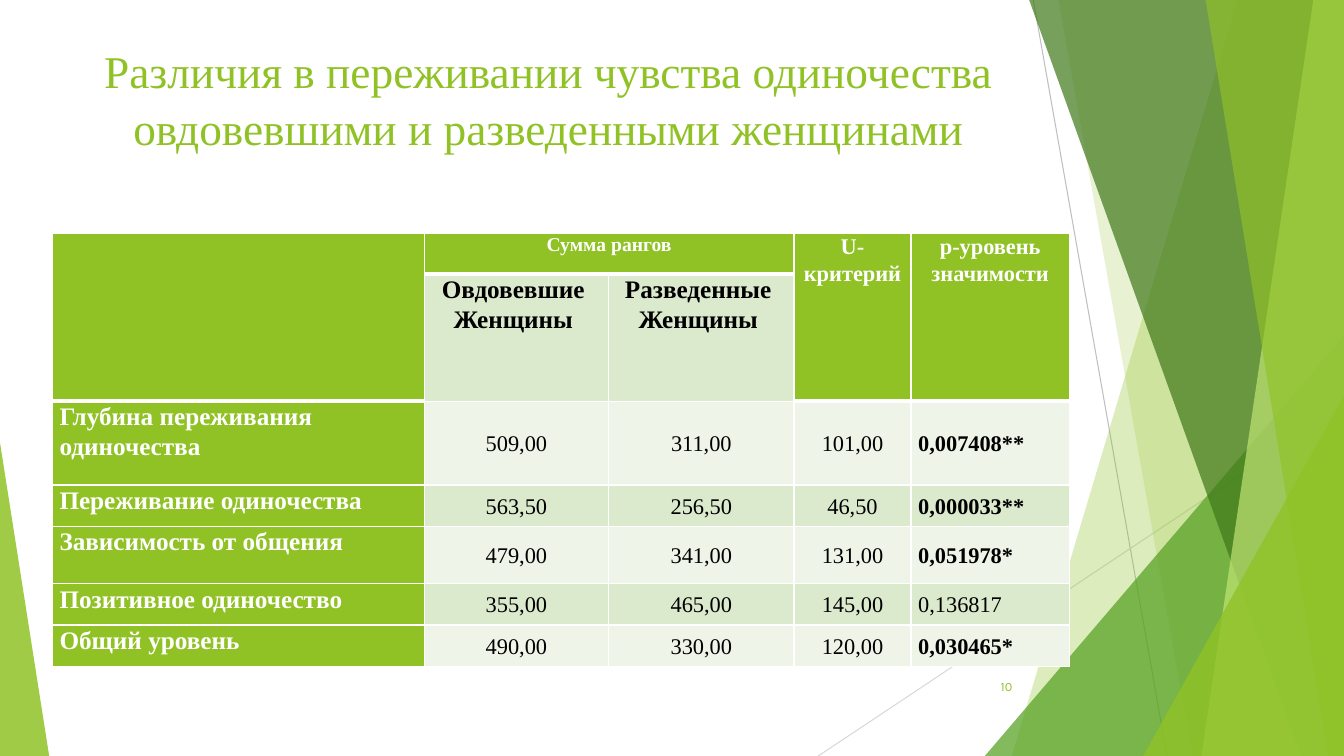
import lxml.etree
import pptx
import pptx.dml.color
import pptx.enum.shapes
import pptx.enum.text
import pptx.oxml.ns
import pptx.util

Cm = pptx.util.Cm
Pt = pptx.util.Pt
RGBColor = pptx.dml.color.RGBColor
Align = pptx.enum.text.PP_ALIGN
Anchor = pptx.enum.text.MSO_ANCHOR
qn = pptx.oxml.ns.qn

LIME = RGBColor(0x90, 0xC2, 0x26)
LEAF = RGBColor(0x54, 0xA0, 0x21)
PINE = RGBColor(0x3F, 0x78, 0x19)
PALE = RGBColor(0xC0, 0xE4, 0x74)
SAGE = RGBColor(0xDB, 0xE9, 0xCD)
MIST = RGBColor(0xEE, 0xF4, 0xE8)
GREY = RGBColor(0xBF, 0xBF, 0xBF)
SILVER = RGBColor(0xD9, 0xD9, 0xD9)
WHITE = RGBColor(0xFF, 0xFF, 0xFF)
BLACK = RGBColor(0, 0, 0)
SERIF = "Times New Roman"
WIDE, HIGH = 33.87, 19.05


def write(frame, text, look, align, gap=1.0):
    """Fill a text frame, one paragraph per line of text."""
    frame.text = text
    for para in frame.paragraphs:
        para.alignment = align
        para.line_spacing = gap
        for run in para.runs:
            run.font.color.rgb = look["color"]
            for key, value in look.items():
                if key != "color":
                    setattr(run.font, key, value)


def tint(shape, color, alpha):
    """Give a shape a see-through fill with no line or shadow."""
    shape.shadow.inherit = False
    shape.line.fill.background()
    shape.fill.solid()
    shape.fill.fore_color.rgb = color
    paint = shape.element.spPr.find(qn("a:solidFill"))[0]
    lxml.etree.SubElement(paint, qn("a:alpha")).set("val", str(alpha * 1000))


deck = pptx.Presentation()
deck.slide_width, deck.slide_height = Cm(WIDE), Cm(HIGH)
slide = deck.slides.add_slide(deck.slide_layouts[5])
shapes = slide.shapes

# Thin lines behind the facets
for ends, color in [((26.04, 0, 29.41, HIGH), GREY),
                    ((WIDE, 10.24, 20.62, HIGH), SILVER)]:
    line = shapes.add_connector(pptx.enum.shapes.MSO_CONNECTOR.STRAIGHT,
                                *map(Cm, ends))
    line.line.color.rgb = color
    line.line.width = Pt(0.75)
    lxml.etree.SubElement(line.element.spPr, qn("a:effectLst"))

# Facets: two numbers are the top and bottom x of a strip reaching the right
# edge; four are the left, top, width and peak of a triangle on the bottom edge
facets = [
    ((31.19, 25.5), LIME, 30),
    ((26.67, 30.05), LIME, 20),
    ((24.82, 8.46, 9.05, 1), LEAF, 72),
    ((25.93, 32.79), PINE, 70),
    ((33.1, 30.28), PALE, 70),
    ((30.38, 33.48), LIME, 65),
    ((28.81, 9.98, 5.06, 1), LIME, 80),
    ((0, 11.15, 1.24, 0), LIME, 85),
]
for form, color, alpha in facets:
    if len(form) == 2:
        top, base = form
        pen = shapes.build_freeform(Cm(top), Cm(-0.02))
        pen.add_line_segments([(Cm(WIDE), Cm(-0.02)), (Cm(WIDE), Cm(HIGH)),
                               (Cm(base), Cm(HIGH))], close=True)
        facet = pen.convert_to_shape()
    else:
        left, top, width, peak = form
        facet = shapes.add_shape(
            pptx.enum.shapes.MSO_SHAPE.ISOSCELES_TRIANGLE,
            Cm(left), Cm(top), Cm(width), Cm(HIGH - top))
        facet.adjustments[0] = peak
    tint(facet, color, alpha)

# Title
title = shapes.title
place = {"left": 1.88, "top": 0.89, "width": 23.88, "height": 3.56}
for key, value in place.items():
    setattr(title, key, Cm(value))
title.text_frame.word_wrap = True
title.text_frame.auto_size = pptx.enum.text.MSO_AUTO_SIZE.NONE
title.text_frame.vertical_anchor = Anchor.TOP
write(title.text_frame,
      "Различия в переживании чувства одиночества "
      "овдовевшими и разведенными женщинами",
      {"name": SERIF, "size": Pt(32.4), "color": LIME}, Align.CENTER, 1.05)

# Table
rows = [
    ["", "Сумма рангов", "", "U-критерий", "р-уровень\nзначимости"],
    ["", "Овдовевшие \nЖенщины ", "Разведенные \nЖенщины ", "", ""],
    ["Глубина переживания одиночества",
     "509,00", "311,00", "101,00", "0,007408**"],
    ["Переживание одиночества", "563,50", "256,50", "46,50", "0,000033**"],
    ["Зависимость от общения", "479,00", "341,00", "131,00", "0,051978*"],
    ["Позитивное одиночество", "355,00", "465,00", "145,00", "0,136817"],
    ["Общий уровень", "490,00", "330,00", "120,00", "0,030465*"],
]
widths = [9.37, 4.65, 4.67, 2.95, 3.99]
heights = [1.04, 3.2, 2.11, 1.04, 1.45, 1.04, 1.04]
table = shapes.add_table(len(rows), len(widths), Cm(1.32), Cm(5.87),
                         Cm(sum(widths)), Cm(sum(heights))).table
for column, width in zip(table.columns, widths):
    column.width = Cm(width)
for row, height in zip(table.rows, heights):
    row.height = Cm(height)
for col in (0, 3, 4):
    table.cell(0, col).merge(table.cell(1, col))
table.cell(0, 1).merge(table.cell(0, 2))

thick = {(0, col) for col in range(5)} | {(1, 0), (1, 3), (1, 4)}
inset = {"margin_left": Cm(0.18), "margin_right": Cm(0.18),
         "margin_top": 0, "margin_bottom": 0}
for r, texts in enumerate(rows):
    for c, text in enumerate(texts):
        cell = table.cell(r, c)
        for key, value in inset.items():
            setattr(cell, key, value)
        green = c == 0 or (r, c) in thick
        data = r > 1 and c > 0
        cell.vertical_anchor = Anchor.MIDDLE if data else Anchor.TOP
        cell.fill.solid()
        cell.fill.fore_color.rgb = LIME if green else SAGE if r % 2 else MIST
        if text:
            size = 14 if (r, c) == (0, 1) else 16 if data or r == 0 else 18
            look = {"name": SERIF, "size": Pt(size),
                    "bold": not data or "*" in text,
                    "color": WHITE if green else BLACK}
            flush = r > 1 and c in (0, 4)
            write(cell.text_frame, text, look,
                  Align.LEFT if flush else Align.CENTER, 1.07)
        sides = {"L": 1, "R": 1, "T": 3 if (r - 1, c) in thick else 1,
                 "B": 3 if (r, c) in thick else 1}
        props = cell._tc.get_or_add_tcPr()
        for i, (side, points) in enumerate(sides.items()):
            edge = lxml.etree.Element(qn("a:ln" + side), w=str(Pt(points)))
            paint = lxml.etree.SubElement(edge, qn("a:solidFill"))
            lxml.etree.SubElement(paint, qn("a:srgbClr"), val=str(WHITE))
            props.insert(i, edge)

# Page number
page = shapes.add_textbox(Cm(23.85), Cm(16.79), Cm(1.91), Cm(1.02))
page.text_frame.word_wrap = True
page.text_frame.vertical_anchor = Anchor.MIDDLE
write(page.text_frame, "10",
      {"name": "Karla", "size": Pt(9), "color": LIME}, Align.RIGHT)

deck.save("out.pptx")
